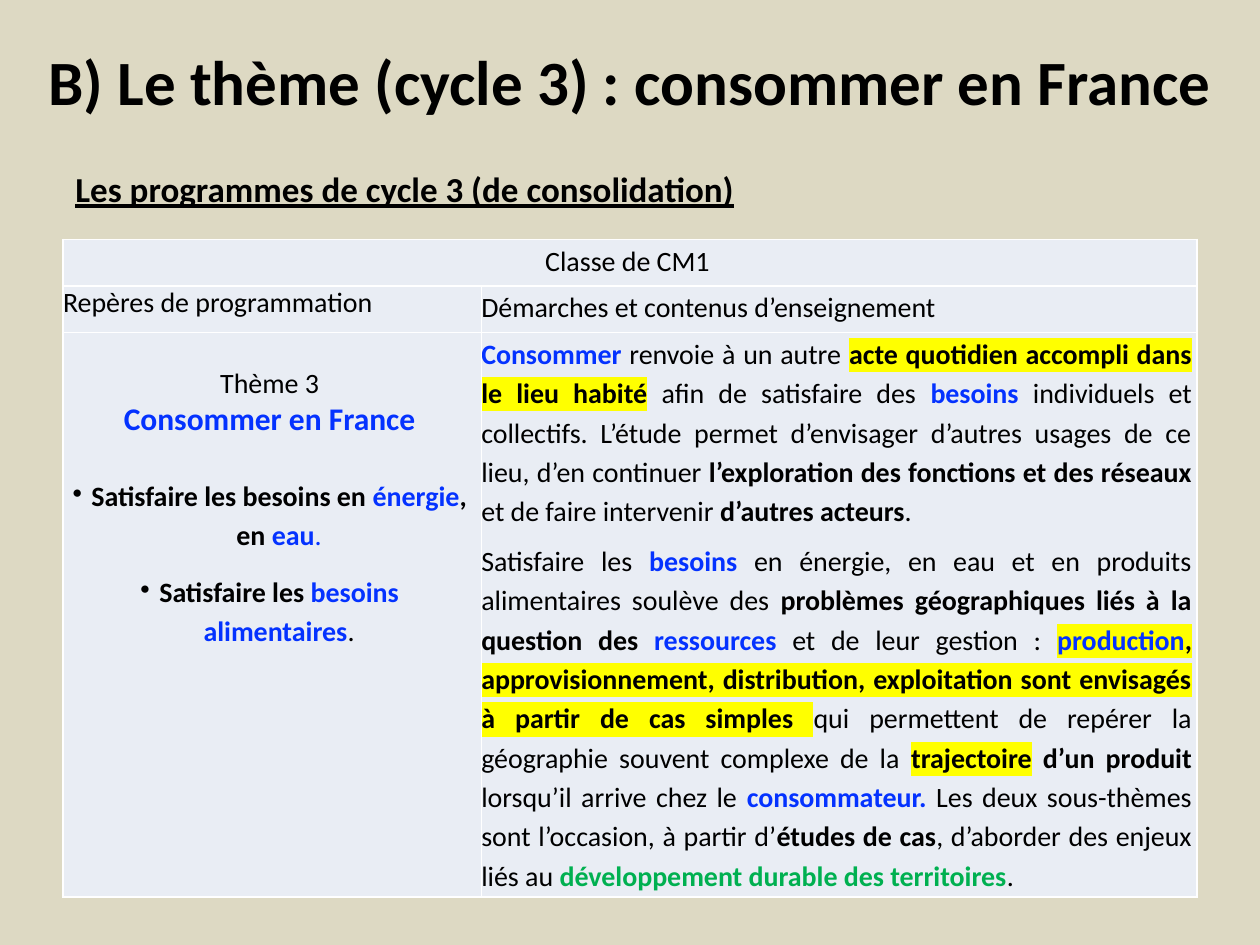
"""Build the slide on the cycle 3 theme « consommer en France »."""
import pptx
import pptx.dml.color
import pptx.enum.text
import pptx.oxml
import pptx.oxml.ns
import pptx.util
from dataclasses import dataclass

Inches, Pt = pptx.util.Inches, pptx.util.Pt
ALIGN = pptx.enum.text.PP_ALIGN
ANCHOR = pptx.enum.text.MSO_ANCHOR


@dataclass(frozen=True)
class Theme:
    font: str = "Calibri"
    background: str = "DDD9C3"
    cell: str = "E9EDF4"
    border: str = "FFFFFF"
    ink: str = "000000"
    key: str = "0432FF"
    green: str = "00B050"
    marker: str = "FFFF00"
    title: int = 36
    subtitle: int = 20
    theme_name: int = 18
    text: int = 16


THEME = Theme()
STYLES = {
    "plain": {},
    "bold": {"bold": True},
    "key": {"bold": True, "color": THEME.key},
    "theme": {"bold": True, "color": THEME.key, "size": THEME.theme_name},
    "key_plain": {"color": THEME.key},
    "green": {"bold": True, "color": THEME.green},
    "marked": {"bold": True, "marker": THEME.marker},
    "key_marked": {"bold": True, "color": THEME.key, "marker": THEME.marker},
    "title": {"bold": True, "size": THEME.title},
    "subtitle": {"bold": True, "size": THEME.subtitle, "underline": True},
}
LAYOUTS = {
    "left": {"align": ALIGN.LEFT},
    "center": {"align": ALIGN.CENTER},
    "heading": {"align": ALIGN.CENTER, "line": 1.15, "after": 6},
    "justified": {"align": ALIGN.JUSTIFY, "line": 1.15, "after": 6},
    "first_bullet": {"align": ALIGN.CENTER, "line": 1.15, "before": 20, "after": 10, "bullet": True},
    "bullet": {"align": ALIGN.CENTER, "line": 1.15, "after": 10, "bullet": True},
}

TITLE = [("center", [("B) Le thème (cycle 3) : consommer en France", "title")])]
SUBTITLE = [("left", [("Les programmes de cycle 3 (de consolidation)", "subtitle")])]
CLASS_LEVEL = [("heading", [("Classe de CM1", "plain")])]
MILESTONES = [("left", [("Repères de programmation", "plain")])]
APPROACH = [("justified", [("Démarches et contenus d’enseignement", "plain")])]
TOPICS = [
    ("center", [("Thème 3", "plain")]),
    ("center", [("Consommer en France", "theme")]),
    ("first_bullet", [
        ("Satisfaire les besoins en ", "bold"), ("énergie", "key"),
        (", en ", "bold"), ("eau", "key"), (".", "key_plain"),
    ]),
    ("bullet", [
        ("Satisfaire les ", "bold"), ("besoins alimentaires", "key"), (".", "plain"),
    ]),
]
CONTENTS = [
    ("justified", [
        ("Consommer", "key"), (" renvoie à un autre ", "plain"),
        ("acte quotidien accompli dans le lieu habité", "marked"),
        (" afin de satisfaire des ", "plain"), ("besoins", "key"),
        (" individuels et collectifs. L’étude permet d’envisager d’autres usages"
         " de ce lieu, d’en continuer ", "plain"),
        ("l’exploration des fonctions et des réseaux ", "bold"),
        ("et de faire intervenir ", "plain"), ("d’autres acteurs", "bold"), (".", "plain"),
    ]),
    ("justified", [
        ("Satisfaire les ", "plain"), ("besoins", "key"),
        (" en énergie, en eau et en produits alimentaires soulève des ", "plain"),
        ("problèmes géographiques liés à la question des ", "bold"),
        ("ressources ", "key"), ("et de leur gestion : ", "plain"),
        ("production", "key_marked"),
        (", approvisionnement, distribution, exploitation sont envisagés"
         " à partir de cas simples ", "marked"),
        ("qui permettent de repérer la géographie souvent complexe de la ", "plain"),
        ("trajectoire", "marked"), (" d’un produit ", "bold"),
        ("lorsqu’il arrive chez le ", "plain"), ("consommateur.", "key"),
        (" Les deux sous-thèmes sont l’occasion, à partir d’", "plain"),
        ("études de cas", "bold"), (", d’aborder des enjeux liés au ", "plain"),
        ("développement durable des territoires", "green"), (".", "plain"),
    ]),
]
ROWS = [[CLASS_LEVEL, None], [MILESTONES, APPROACH], [TOPICS, CONTENTS]]
COLUMN_WIDTHS = [3.32, 5.68]
ROW_HEIGHTS = [0.37, 0.37, 4.48]
TOPICS_TOP = 0.27


def rgb(value):
    return pptx.dml.color.RGBColor.from_string(value)


def add_xml(parent, xml):
    namespace = pptx.oxml.ns.nsdecls("a")
    parent.append(pptx.oxml.parse_xml(xml.replace(" ", f" {namespace} ", 1)))


def style_run(run, color=THEME.ink, size=THEME.text, bold=False, underline=False, marker=None):
    font = run.font
    font.size, font.bold, font.underline = Pt(size), bold, underline
    font.color.rgb = rgb(color)
    if marker:
        add_xml(run._r.get_or_add_rPr(),
                f'<a:highlight ><a:srgbClr val="{marker}"/></a:highlight>')
    font.name = THEME.font


def lay_out(paragraph, align, line=1.0, before=0, after=0, bullet=False):
    paragraph.alignment, paragraph.line_spacing = align, line
    paragraph.space_before, paragraph.space_after = Pt(before), Pt(after)
    if bullet:
        properties = paragraph._p.get_or_add_pPr()
        indent = Inches(0.15)
        properties.set("marL", str(indent))
        properties.set("indent", str(-indent))
        add_xml(properties, '<a:buChar char="•"/>')


def write(frame, paragraphs):
    for index, (layout, segments) in enumerate(paragraphs):
        paragraph = frame.add_paragraph() if index else frame.paragraphs[0]
        lay_out(paragraph, **LAYOUTS[layout])
        for text, style in segments:
            run = paragraph.add_run()
            run.text = text
            style_run(run, **STYLES[style])


def format_cell(cell):
    cell.margin_left = cell.margin_top = cell.margin_bottom = 0
    cell.margin_right = Inches(0.04)
    cell.vertical_anchor = ANCHOR.TOP
    for side in "LRTB":
        add_xml(cell._tc.get_or_add_tcPr(),
                f'<a:ln{side} w="{Pt(1)}"><a:solidFill><a:srgbClr val="{THEME.border}"/>'
                f'</a:solidFill></a:ln{side}>')
    cell.fill.solid()
    cell.fill.fore_color.rgb = rgb(THEME.cell)


def add_programme(slide):
    programme = slide.shapes.add_table(
        len(ROWS), len(COLUMN_WIDTHS), Inches(0.5), Inches(1.9),
        Inches(sum(COLUMN_WIDTHS)), Inches(sum(ROW_HEIGHTS))).table
    programme.first_row = programme.horz_banding = False
    for column, width in zip(programme.columns, COLUMN_WIDTHS):
        column.width = Inches(width)
    for row, height in zip(programme.rows, ROW_HEIGHTS):
        row.height = Inches(height)
    programme.cell(0, 0).merge(programme.cell(0, 1))
    for row, contents in zip(programme.rows, ROWS):
        for cell, paragraphs in zip(row.cells, contents):
            format_cell(cell)
            if paragraphs:
                write(cell.text_frame, paragraphs)
    programme.cell(2, 0).margin_top = Inches(TOPICS_TOP)


def main():
    deck = pptx.Presentation()
    deck.slide_width, deck.slide_height = Inches(10), Inches(7.5)
    slide = deck.slides.add_slide(deck.slide_layouts[5])
    slide.background.fill.solid()
    slide.background.fill.fore_color.rgb = rgb(THEME.background)

    title = slide.shapes.title
    title.left, title.top, title.width, title.height = map(Inches, (0.2, 0, 9.6, 1.28))
    title.text_frame.vertical_anchor = ANCHOR.MIDDLE
    write(title.text_frame, TITLE)

    subtitle = slide.shapes.add_textbox(*map(Inches, (0.5, 1.28, 9, 0.77)))
    subtitle.text_frame.word_wrap = True
    write(subtitle.text_frame, SUBTITLE)

    add_programme(slide)
    deck.save("out.pptx")


if __name__ == "__main__":
    main()
